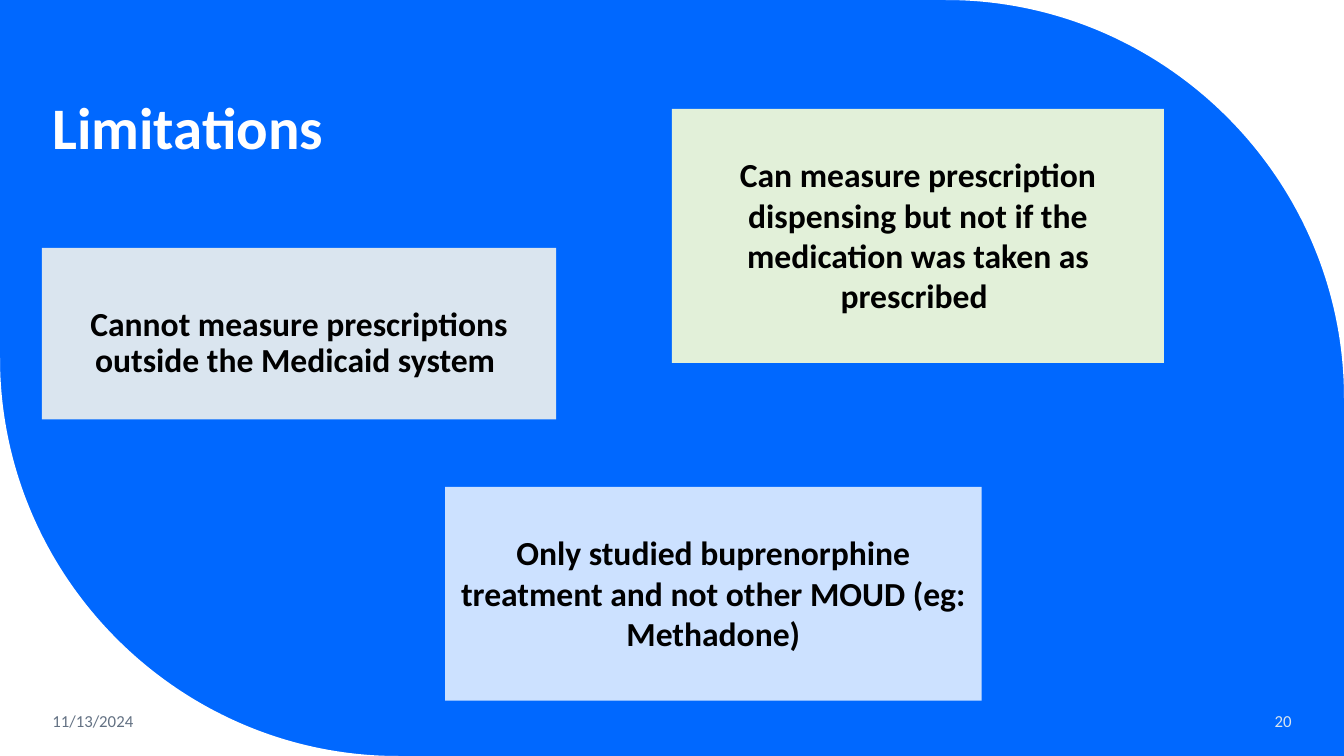
"""Build the Limitations slide: a blue leaf-shaped field with three note cards."""
import lxml.etree
import pptx
import pptx.util
import pptx.dml.color
import pptx.enum.shapes
import pptx.enum.text
import pptx.oxml.ns

RGB = pptx.dml.color.RGBColor
BLUE = RGB(0x00, 0x68, 0xFF)
WHITE = RGB(0xFF, 0xFF, 0xFF)
BLACK = RGB(0x00, 0x00, 0x00)
SLATE = RGB(0x63, 0x71, 0x83)
MIST = RGB(0xDA, 0xE5, 0xEF)
SKY = RGB(0xCC, 0xE1, 0xFF)
GREEN = RGB(0xE2, 0xF0, 0xD9)
ALIGN = pptx.enum.text.PP_ALIGN
ANCHOR = pptx.enum.text.MSO_ANCHOR
RECT = pptx.enum.shapes.MSO_SHAPE.RECTANGLE

deck = pptx.Presentation()
deck.slide_width = wide = pptx.util.Inches(13.33)
deck.slide_height = high = pptx.util.Inches(7.5)
slide = deck.slides.add_slide(deck.slide_layouts[6])
slide.background.fill.solid()
slide.background.fill.fore_color.rgb = BLUE


def write(text, area, size=24, color=BLACK, bold=True, align=ALIGN.CENTER,
          anchor=ANCHOR.MIDDLE, lead=1.0, fill=None, top=0.05):
    """Place text in an area given as percent of the slide's width and height."""
    left, up, across, down = area
    place = [int(part * full / 100) for part, full in
             ((left, wide), (up, high), (across, wide), (down, high))]
    if fill is None:
        box = slide.shapes.add_textbox(*place)
    else:
        box = slide.shapes.add_shape(RECT, *place)
        box.shadow.inherit = False
        box.fill.solid()
        box.fill.fore_color.rgb = fill
        box.line.fill.background()
    frame = box.text_frame
    frame.word_wrap = True
    frame.vertical_anchor = anchor
    frame.margin_top = pptx.util.Inches(top)
    line = frame.paragraphs[0]
    line.alignment = align
    line.line_spacing = lead
    run = line.add_run()
    run.text = text
    run.font.name = "Calibri"
    run.font.size = pptx.util.Pt(size)
    run.font.bold = bold
    run.font.color.rgb = color


reach = pptx.util.Inches(3.95)
bend = 0.55
qn = pptx.oxml.ns.qn
for corner, side in (((wide, 0), 1), ((0, high), -1)):
    start = (corner[0] - side * reach, corner[1])
    end = (corner[0], corner[1] + side * reach)
    path = slide.shapes.build_freeform(*corner)
    path.add_line_segments([start, end], close=True)
    patch = path.convert_to_shape()
    patch.shadow.inherit = False
    patch.fill.solid()
    patch.fill.fore_color.rgb = WHITE
    patch.line.fill.background()
    edge = list(patch.element.iter(qn("a:lnTo")))[1]
    curve = lxml.etree.Element(qn("a:cubicBezTo"))
    pulls = [[point[axis] + bend * (corner[axis] - point[axis]) for axis in (0, 1)]
             for point in (start, end)]
    for x, y in (*pulls, end):
        lxml.etree.SubElement(curve, qn("a:pt"), x=str(int(x - patch.left)),
                              y=str(int(y - patch.top)))
    edge.getparent().replace(edge, curve)

write("Limitations", (3.15, -2.93, 80.2, 24.8), size=42, color=WHITE,
      align=ALIGN.LEFT, anchor=ANCHOR.BOTTOM, lead=0.8)
write("11/13/2024", (3.15, 92.67, 13.95, 5.33), size=12, color=SLATE,
      bold=False, align=ALIGN.LEFT)
write("20", (83.27, 92.67, 13.58, 5.33), size=12, color=MIST,
      bold=False, align=ALIGN.RIGHT)

write("Cannot measure prescriptions outside the Medicaid system ",
      (3.12, 32.8, 38.26, 22.67), fill=MIST, lead=0.9, top=0.25)
write("Only studied buprenorphine treatment and not other MOUD (eg: Methadone)",
      (33.12, 64.4, 39.91, 28.27), fill=SKY, top=0.03)
write("Can measure prescription dispensing but not if the medication was "
      "taken as prescribed ", (50, 14.4, 36.61, 33.6), fill=GREEN, top=0.03)

deck.save("out.pptx")
